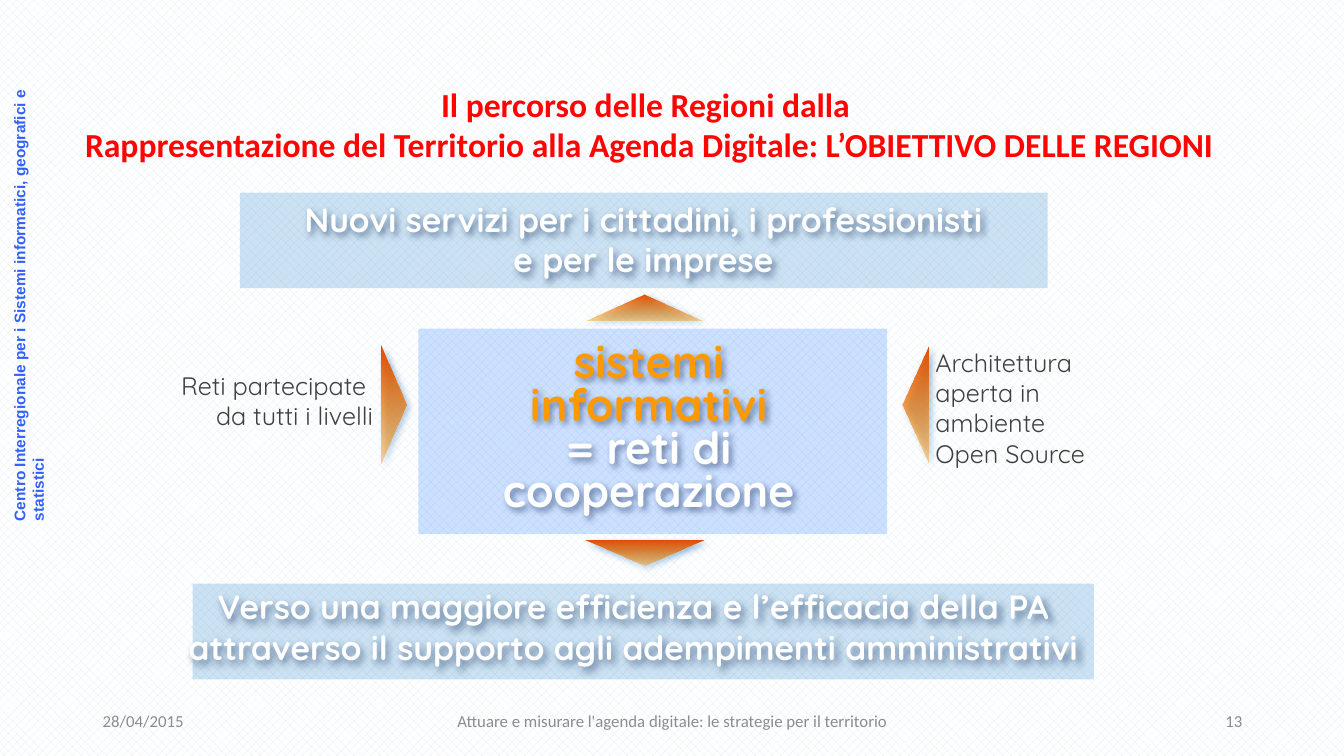
from dataclasses import dataclass

from lxml import etree
from pptx import Presentation
from pptx.dml.color import RGBColor
from pptx.enum.dml import MSO_PATTERN
from pptx.enum.shapes import MSO_SHAPE
from pptx.enum.text import MSO_ANCHOR, MSO_AUTO_SIZE, PP_ALIGN
from pptx.oxml.ns import qn
from pptx.util import Inches, Pt

LEFT, CENTER, RIGHT = PP_ALIGN.LEFT, PP_ALIGN.CENTER, PP_ALIGN.RIGHT
TOP, MIDDLE = MSO_ANCHOR.TOP, MSO_ANCHOR.MIDDLE
NO_AUTOFIT = MSO_AUTO_SIZE.NONE
RECT, TRIANGLE = MSO_SHAPE.RECTANGLE, MSO_SHAPE.ISOSCELES_TRIANGLE
PATTERN = MSO_PATTERN.from_xml("pct40")


@dataclass(frozen=True)
class Style:
    size: float
    font: str
    color: str
    bold: bool = False


class Theme:
    side = Style(11, "Arial", "3161F9", True)
    footer = Style(12, "Calibri", "8C8C8C")
    title = Style(24, "Calibri", "FE0402", True)
    band = Style(24, "Quicksand", "FFFFFF", True)
    core_key = Style(32, "Quicksand", "FF9900", True)
    core = Style(32, "Quicksand", "FFFFFF", True)
    note = Style(18, "Quicksand", "404040")
    pattern_fg, pattern_bg = "DEEBF7", "FFFFFF"
    band_fill, core_fill, panel_alpha = "0070C0", "0066FF", 20
    arrow_pale, arrow_dark, arrow_alpha = "FF9900", "DE4B02", 40
    arrow_shadow, text_shadow = "0062AC", "001A4D"


def rgb(value):
    return RGBColor.from_string(value)


def set_alpha(color_parent, percent):
    color = color_parent.find(".//" + qn("a:srgbClr"))
    etree.SubElement(color, qn("a:alpha"), val=str(percent * 1000))


def add_shadow(sp, color):
    """Soft shadow falling to the lower right."""
    effects = etree.SubElement(sp._element.spPr, qn("a:effectLst"))
    shadow = etree.SubElement(effects, qn("a:outerShdw"), blurRad=str(int(Pt(5))),
                              dist=str(int(Pt(3))), dir="2700000", algn="ctr",
                              rotWithShape="0")
    etree.SubElement(shadow, qn("a:srgbClr"), val=color)
    set_alpha(shadow, 50)


def add_run(p, text, style):
    r = p.add_run()
    r.text = text
    r.font.size, r.font.name, r.font.bold = Pt(style.size), style.font, style.bold
    r.font.color.rgb = rgb(style.color)


def add_text(slide, box, lines, align=LEFT, anchor=TOP, wrap=False, spacing=None):
    """Text box with one paragraph for each (text, style) pair."""
    sp = slide.shapes.add_textbox(*map(Inches, box))
    tf = sp.text_frame
    tf.word_wrap, tf.auto_size, tf.vertical_anchor = wrap, NO_AUTOFIT, anchor
    for i, (text, style) in enumerate(lines):
        p = tf.add_paragraph() if i else tf.paragraphs[0]
        p.alignment = align
        if spacing:
            p.line_spacing = spacing
        add_run(p, text, style)
    return sp


def add_panel(slide, box, color):
    sp = slide.shapes.add_shape(RECT, *map(Inches, box))
    sp.shadow.inherit = False
    sp.line.fill.background()
    sp.fill.solid()
    sp.fill.fore_color.rgb = rgb(color)
    set_alpha(sp._element.spPr, Theme.panel_alpha)


def add_arrow(slide, center_x, center_y, rotation):
    """Triangle pointing up, then turned; its gradient stays vertical."""
    w, h = 1.17, 0.25
    sp = slide.shapes.add_shape(TRIANGLE, Inches(center_x - w / 2), Inches(center_y - h / 2),
                                Inches(w), Inches(h))
    sp.rotation = rotation
    sp.line.fill.background()
    sp.fill.gradient()
    sp.fill.gradient_angle = 90
    pale, dark = sp.fill.gradient_stops
    pale.color.rgb, dark.color.rgb = rgb(Theme.arrow_pale), rgb(Theme.arrow_dark)
    gradient = sp._element.spPr.find(qn("a:gradFill"))
    gradient.set("rotWithShape", "0")
    set_alpha(gradient, Theme.arrow_alpha)
    add_shadow(sp, Theme.arrow_shadow)


def add_title(slide, box, lines):
    title = slide.shapes.title
    title.left, title.top, title.width, title.height = map(Inches, box)
    tf = title.text_frame
    tf.word_wrap, tf.auto_size, tf.vertical_anchor = True, NO_AUTOFIT, TOP
    tf.margin_right = Inches(0.55)
    p = tf.paragraphs[0]
    p.alignment = CENTER
    for i, text in enumerate(lines):
        if i:
            p.add_line_break()
        add_run(p, text, Theme.title)


def add_side_label(slide, box, text):
    sp = add_text(slide, box, [(text, Theme.side)], wrap=True)
    sp.rotation = 270


def add_footer(slide, box, date, text, number):
    left, top, width, height = box
    side_width, text_width = 3, 4.5
    right = left + width
    parts = [(left, side_width, date, LEFT),
             (left + (width - text_width) / 2, text_width, text, CENTER),
             (right - side_width, side_width, number, RIGHT)]
    for x, w, content, align in parts:
        add_text(slide, (x, top, w, height), [(content, Theme.footer)], align, MIDDLE, True)


def add_band(slide, box, text_box, lines):
    add_panel(slide, box, Theme.band_fill)
    sp = add_text(slide, text_box, [(line, Theme.band) for line in lines], CENTER, MIDDLE)
    add_shadow(sp, Theme.text_shadow)


def add_core(slide, box):
    """Central panel with the four arrows around it."""
    left, top, width, height = box
    add_panel(slide, box, Theme.core_fill)
    lines = [("sistemi", Theme.core_key), ("informativi", Theme.core_key),
             ("= reti di", Theme.core), ("cooperazione", Theme.core)]
    sp = add_text(slide, (left + 0.08, top + 0.06, width - 0.24, height - 0.14),
                  lines, CENTER, MIDDLE, spacing=0.8)
    add_shadow(sp, Theme.text_shadow)
    axis_x, axis_y = left + 2.24, top + 0.75
    add_arrow(slide, axis_x, top - 0.21, 0)
    add_arrow(slide, left - 0.24, axis_y, 90)
    add_arrow(slide, axis_x, top + height + 0.19, 180)
    add_arrow(slide, left + width + 0.28, axis_y, 270)


def add_note(slide, box, lines, align, anchor):
    add_text(slide, box, [(line, Theme.note) for line in lines], align, anchor)


def build_goal_slide(prs):
    slide = prs.slides.add_slide(prs.slide_layouts[5])
    fill = slide.background.fill
    fill.patterned()
    fill.pattern = PATTERN
    fill.fore_color.rgb, fill.back_color.rgb = rgb(Theme.pattern_fg), rgb(Theme.pattern_bg)

    add_title(slide, (0.14, 0.78, 13.05, 0.91), [
        "Il percorso delle Regioni dalla ",
        "Rappresentazione del Territorio alla Agenda Digitale: L’OBIETTIVO DELLE REGIONI"])
    add_side_label(slide, (-2.31, 2.62, 5.01, 0.29),
                   "Centro Interregionale per i Sistemi informatici, geografici e statistici")
    add_footer(slide, (0.92, 6.95, 11.5, 0.4), "28/04/2015",
               "Attuare e misurare l'agenda digitale: le strategie per il territorio", "13")
    add_band(slide, (1.91, 5.79, 8.94, 0.95), (2.07, 5.63, 8.42, 1.17), [
        "Verso una maggiore efficienza e l’efficacia della PA",
        "attraverso il supporto agli adempimenti amministrativi"])
    add_core(slide, (4.15, 3.26, 4.65, 2.04))
    add_note(slide, (9.18, 3.54, 1.67, 1.01),
             ["Architettura", "aperta in", "ambiente", "Open Source"], LEFT, MIDDLE)
    add_note(slide, (1.63, 3.62, 2.17, 1.6),
             ["Reti partecipate ", "da tutti i livelli"], RIGHT, TOP)
    add_band(slide, (2.38, 1.91, 8.01, 0.95), (2.17, 1.91, 8.42, 0.92), [
        "Nuovi servizi per i cittadini, i professionisti",
        "e per le imprese"])


def main():
    prs = Presentation()
    prs.slide_width, prs.slide_height = Inches(13.33), Inches(7.5)
    build_goal_slide(prs)
    prs.save("out.pptx")


if __name__ == "__main__":
    main()
